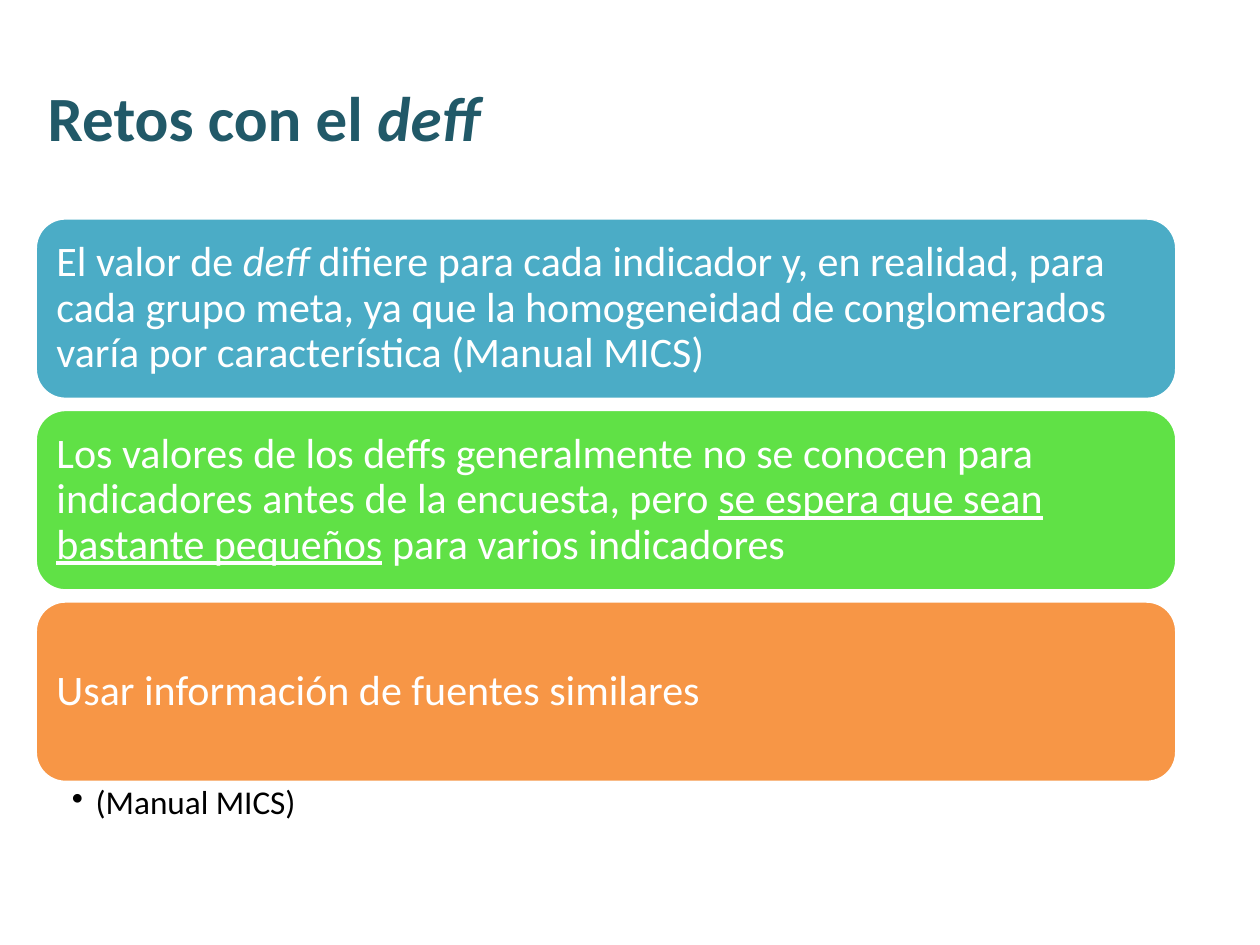
from lxml.etree import SubElement
from pptx import Presentation
from pptx.dml.color import RGBColor
from pptx.enum.shapes import MSO_SHAPE
from pptx.enum.text import MSO_ANCHOR, PP_ALIGN
from pptx.oxml.ns import qn
from pptx.util import Inches, Pt

COLORS = {
    "title": "215968",
    "blue": "4BACC6",
    "green": "60E146",
    "orange": "F79646",
    "white": "FFFFFF",
    "black": "000000",
}
LEFT, WIDTH = 0.28, 9.06
CARD_TOP, CARD_HEIGHT, CARD_GAP = 1.73, 1.44, 0.08
CARDS = [
    ("blue", [
        ("El valor de ", ""),
        ("deff", "italic"),
        (" difiere para cada indicador y, en realidad, para cada grupo meta, "
         "ya que la homogeneidad de conglomerados varía por característica (Manual MICS)", ""),
    ]),
    ("green", [
        ("Los valores de los deffs generalmente no se conocen para indicadores "
         "antes de la encuesta, pero ", ""),
        ("se espera que sean bastante pequeños", "underline"),
        (" para varios indicadores", ""),
    ]),
    ("orange", [("Usar información de fuentes similares", "")]),
]


class SlideBuilder:
    font_name = "Calibri"

    def __init__(self, page):
        self.page = page

    def color(self, name):
        return RGBColor.from_string(COLORS[name])

    def fill_para(self, para, spans, size, color, bold=False):
        para.alignment = PP_ALIGN.LEFT
        para.font.name = self.font_name
        para.font.size = Pt(size)
        para.font.bold = bold
        para.font.color.rgb = self.color(color)
        for text, emphasis in spans:
            span = para.add_run()
            span.text = text
            if emphasis == "italic":
                span.font.italic = True
            elif emphasis == "underline":
                span.font.underline = True

    def text_box(self, left, top, width, height):
        box = self.page.shapes.add_textbox(
            Inches(left), Inches(top), Inches(width), Inches(height))
        box.text_frame.word_wrap = True
        return box.text_frame

    def title(self, spans):
        frame = self.text_box(LEFT, 0.3, 8.98, 1.25)
        frame.vertical_anchor = MSO_ANCHOR.MIDDLE
        self.fill_para(frame.paragraphs[0], spans, 36, "title", bold=True)

    def card(self, top, fill, spans):
        card = self.page.shapes.add_shape(
            MSO_SHAPE.ROUNDED_RECTANGLE,
            Inches(LEFT), Inches(top), Inches(WIDTH), Inches(CARD_HEIGHT))
        card.shadow.inherit = False
        card.fill.solid()
        card.fill.fore_color.rgb = self.color(fill)
        card.line.color.rgb = self.color("white")
        card.line.width = Pt(2)
        frame = card.text_frame
        frame.word_wrap = True
        frame.vertical_anchor = MSO_ANCHOR.MIDDLE
        frame.margin_left = frame.margin_right = Inches(0.1)
        frame.margin_top = frame.margin_bottom = Inches(0.1)
        para = frame.paragraphs[0]
        para.line_spacing = 0.9
        self.fill_para(para, spans, 24, "white")

    def bullet(self, top, text):
        frame = self.text_box(LEFT, top, WIDTH, 0.43)
        frame.margin_left, frame.margin_right = Inches(0.29), Inches(0.19)
        frame.margin_top = frame.margin_bottom = Inches(0.03)
        para = frame.paragraphs[0]
        para.line_spacing = 0.9
        properties = para._p.get_or_add_pPr()
        properties.set("marL", str(Inches(0.19)))
        properties.set("indent", str(-Inches(0.19)))
        SubElement(properties, qn("a:buChar"), char="•")
        self.fill_para(para, [(text, "")], 19, "black")


def main():
    deck = Presentation()
    deck.slide_width, deck.slide_height = Inches(10), Inches(7.5)
    builder = SlideBuilder(deck.slides.add_slide(deck.slide_layouts[6]))
    builder.title([("Retos con el ", ""), ("deff", "italic")])
    for index, (fill, spans) in enumerate(CARDS):
        builder.card(CARD_TOP + index * (CARD_HEIGHT + CARD_GAP), fill, spans)
    builder.bullet(6.21, "(Manual MICS)")
    deck.save("out.pptx")


if __name__ == "__main__":
    main()
